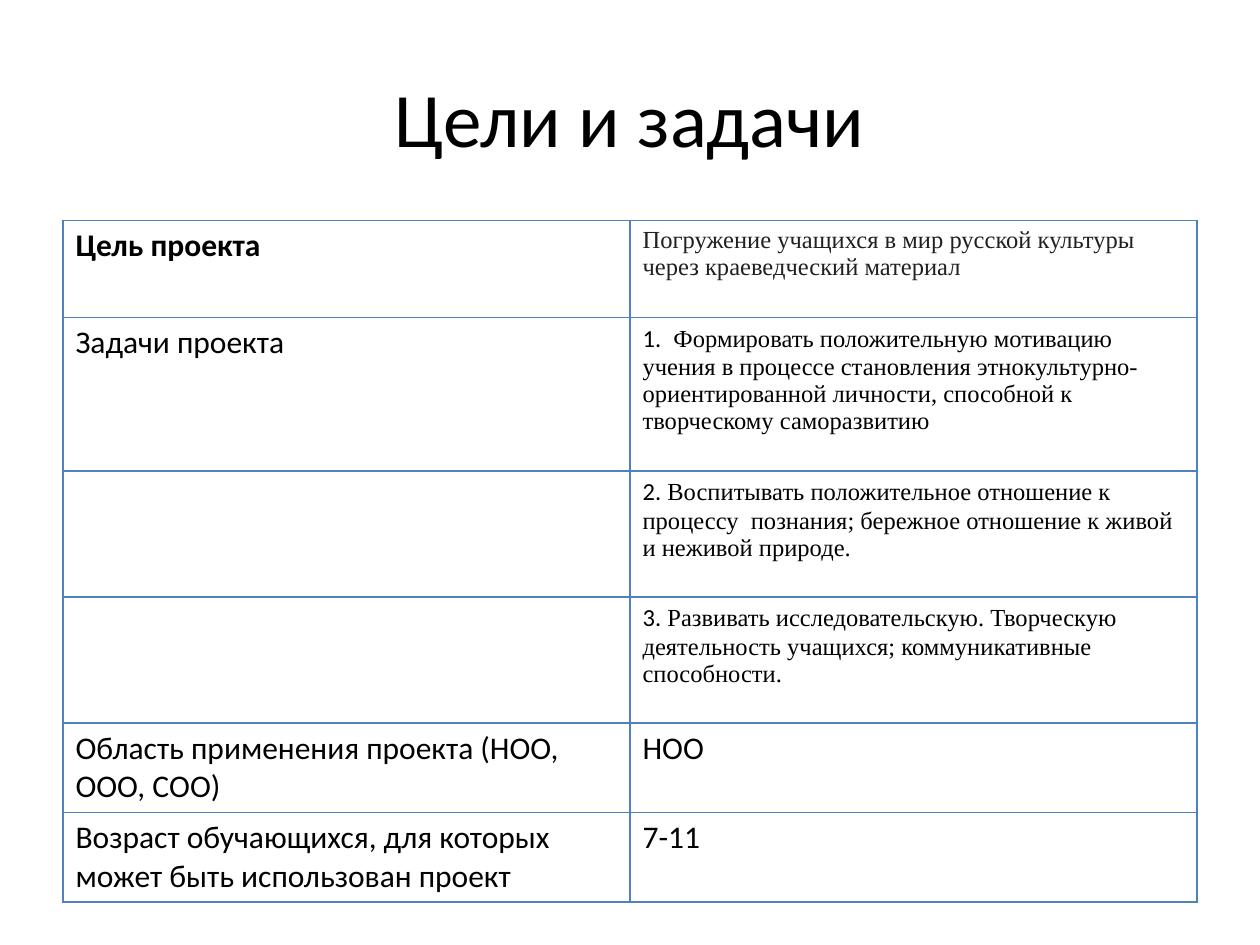
from lxml import etree
from pptx import Presentation
from pptx.dml.color import RGBColor
from pptx.enum.text import MSO_ANCHOR, PP_ALIGN
from pptx.oxml.ns import qn
from pptx.util import Inches, Pt

MIDDLE = MSO_ANCHOR.MIDDLE
CENTER = PP_ALIGN.CENTER
SANS = "Calibri"
SERIF = "Times New Roman"
COLORS = {"text": "000000", "goal": "1F2021", "line": "4F81BD", "back": "FFFFFF"}


class Deck:
    def __init__(self, slide):
        self.slide = slide

    def style(self, run, size, font=SANS, color="text", bold=False):
        run.font.size = Pt(size)
        run.font.name = font
        run.font.bold = bold
        run.font.color.rgb = RGBColor.from_string(COLORS[color])

    def title(self, text, left, top, width, height):
        box = self.slide.shapes.add_textbox(
            Inches(left), Inches(top), Inches(width), Inches(height))
        frame = box.text_frame
        frame.word_wrap = True
        frame.vertical_anchor = MIDDLE
        frame.text = text
        para = frame.paragraphs[0]
        para.alignment = CENTER
        self.style(para.runs[0], 44)

    def border(self, cell):
        props = cell._tc.get_or_add_tcPr()
        for side in ("a:lnL", "a:lnR", "a:lnT", "a:lnB"):
            line = etree.SubElement(props, qn(side), w=str(Pt(1)))
            fill = etree.SubElement(line, qn("a:solidFill"))
            etree.SubElement(fill, qn("a:srgbClr"), val=COLORS["line"])

    def cell(self, cell, parts):
        self.border(cell)
        cell.fill.solid()
        cell.fill.fore_color.rgb = RGBColor.from_string(COLORS["back"])
        para = cell.text_frame.paragraphs[0]
        for text, look in parts:
            run = para.add_run()
            run.text = text
            self.style(run, **look)

    def table(self, rows, left, top, width, heights):
        count = len(rows[0])
        grid = self.slide.shapes.add_table(
            len(rows), count, Inches(left), Inches(top),
            Inches(width), Inches(sum(heights))).table
        for col in grid.columns:
            col.width = Inches(width / count)
        for r, row in enumerate(rows):
            grid.rows[r].height = Inches(heights[r])
            for c, parts in enumerate(row):
                self.cell(grid.cell(r, c), parts)


LABEL = {"size": 18}
HEAD = {"size": 18, "bold": True}
MARK = {"size": 14}
BODY = {"size": 14, "font": SERIF}
GOAL = {"size": 14, "font": SERIF, "color": "goal"}

ROWS = [
    [[("Цель проекта", HEAD)],
     [("Погружение учащихся в мир русской культуры через "
       "краеведческий материал", GOAL)]],
    [[("Задачи проекта", LABEL)],
     [("1.", MARK),
      ("  Формировать положительную мотивацию учения в процессе становления "
       "этнокультурно-ориентированной личности, способной к творческому "
       "саморазвитию", BODY)]],
    [[],
     [("2.", MARK),
      (" Воспитывать положительное отношение к процессу  познания; "
       "бережное отношение к живой и неживой природе.", BODY)]],
    [[],
     [("3.", MARK),
      (" Развивать исследовательскую. Творческую деятельность учащихся; "
       "коммуникативные способности.", BODY)]],
    [[("Область применения проекта (НОО, ООО, СОО) ", LABEL)],
     [("НОО", LABEL)]],
    [[("Возраст обучающихся, для которых может быть использован проект", LABEL)],
     [("7-11", LABEL)]],
]

show = Presentation()
show.slide_width = Inches(10)
show.slide_height = Inches(7.5)
deck = Deck(show.slides.add_slide(show.slide_layouts[6]))
deck.title("Цели и задачи", 0.5, 0.3, 9, 1.25)
deck.table(ROWS, 0.5, 1.75, 9, [0.77, 1.22, 1, 1, 0.71, 0.71])
show.save("out.pptx")
